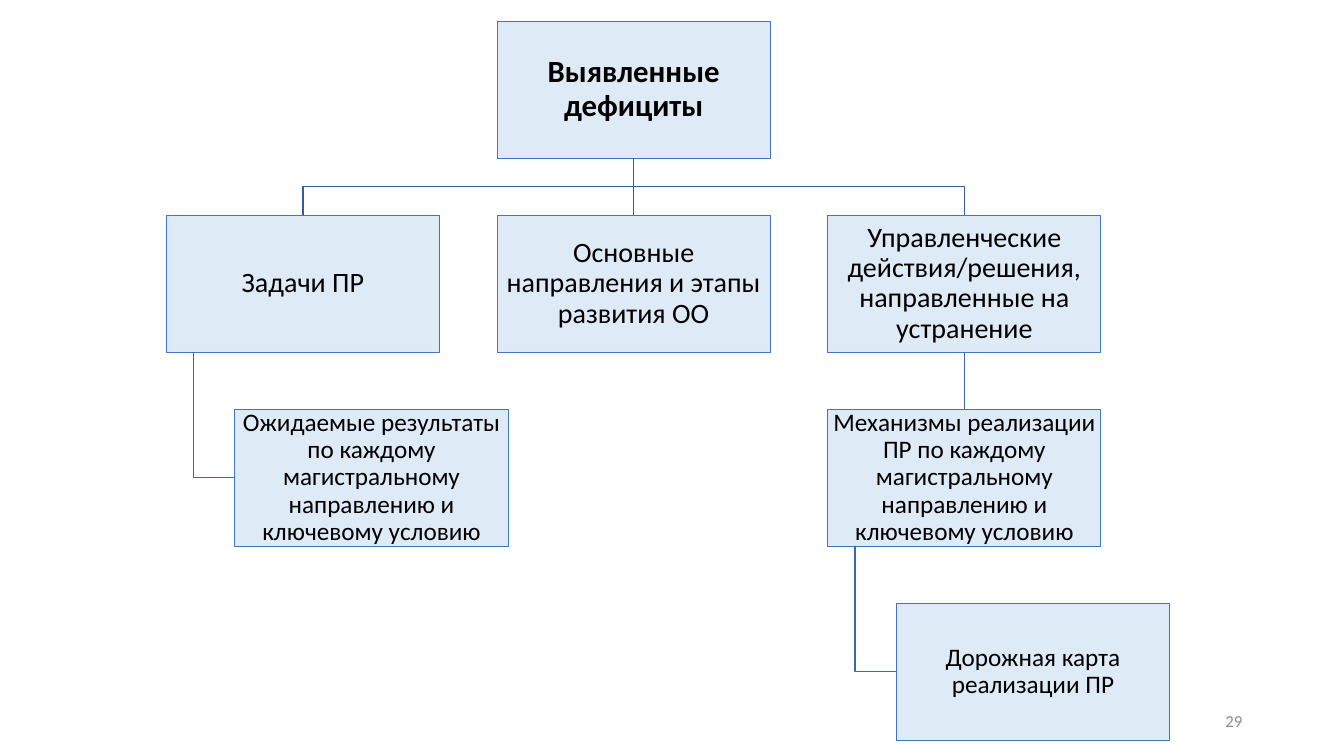
from lxml import etree
from pptx import Presentation
from pptx import util as u
from pptx.dml.color import RGBColor
from pptx.enum import shapes, text
from pptx.oxml.ns import qn

BOX_W, BOX_H = 2.71, 1.36
LEFT, TOP = 1.65, 0.21
COL_STEP, ROW_STEP = 3.28, 1.925
INDENT, TRUNK = 0.68, 0.27  # offsets of an indented box and of its trunk line
UPPER_LINE, LOWER_LINE = "365B9D", "3E67B2"


def rgb(value):
    return RGBColor.from_string(value)


def write(sp, content, size=18, color="000000", bold=False,
          align=text.PP_ALIGN.CENTER, spacing=0.9, inset=None):
    tf = sp.text_frame
    tf.word_wrap = True
    tf.vertical_anchor = text.MSO_ANCHOR.MIDDLE
    if inset is not None:
        tf.margin_left = tf.margin_right = u.Inches(inset)
        tf.margin_top = tf.margin_bottom = u.Inches(inset)
    p = tf.paragraphs[0]
    p.alignment = align
    p.line_spacing = spacing
    r = p.add_run()
    r.text = content
    r.font.name = "Calibri"
    r.font.size = u.Pt(size)
    r.font.bold = bold
    r.font.color.rgb = rgb(color)


class Chart:
    """Hierarchy of boxes on one slide."""
    fill, border = "DEEBF7", "4472C4"

    def __init__(self, s):
        self.s = s

    def box(self, col, row, content, size, indent=0, bold=False, inset=0.01):
        sp = self.s.shapes.add_shape(
            shapes.MSO_SHAPE.RECTANGLE,
            u.Inches(LEFT + col * COL_STEP + indent),
            u.Inches(TOP + row * ROW_STEP), u.Inches(BOX_W), u.Inches(BOX_H))
        sp.shadow.inherit = False
        sp.fill.solid()
        sp.fill.fore_color.rgb = rgb(self.fill)
        sp.line.color.rgb = rgb(self.border)
        sp.line.width = u.Pt(0.75)
        write(sp, content, size=size, bold=bold, inset=inset)
        return sp

    def straight(self, parent, child, color):
        line = self.s.shapes.add_connector(shapes.MSO_CONNECTOR.STRAIGHT, 0, 0, 0, 0)
        line.begin_connect(parent, 2)
        line.end_connect(child, 0)
        line.line.color.rgb = rgb(color)
        line.line.width = u.Pt(1)
        etree.SubElement(line._element.spPr, qn("a:effectLst"))

    def bent(self, points, color):
        """Draw an open line through points given in EMU."""
        path = self.s.shapes.build_freeform(*points[0], scale=1.0)
        path.add_line_segments(points[1:], close=False)
        sp = path.convert_to_shape()
        sp.shadow.inherit = False
        sp.fill.background()
        sp.line.color.rgb = rgb(color)
        sp.line.width = u.Pt(1)

    def fork(self, parent, child):
        """Join a parent's bottom to the top of a child in another column."""
        x1, x2 = (sp.left + sp.width // 2 for sp in (parent, child))
        y1, y2 = parent.top + parent.height, child.top
        middle = (y1 + y2) // 2
        self.bent([(x1, y1), (x1, middle), (x2, middle), (x2, y2)], UPPER_LINE)

    def hang(self, parent, child):
        """Join a parent's bottom to the left side of an indented child."""
        x = parent.left + u.Inches(TRUNK)
        y = child.top + child.height // 2
        self.bent([(x, parent.top + parent.height), (x, y), (child.left, y)], LOWER_LINE)

    def page_number(self, content):
        sp = self.s.shapes.add_textbox(u.Inches(9.42), u.Inches(6.95),
                                       u.Inches(3), u.Inches(0.4))
        write(sp, content, size=12, color="8C8C8C",
              align=text.PP_ALIGN.RIGHT, spacing=1.0)


def main():
    prs = Presentation()
    prs.slide_width, prs.slide_height = u.Inches(13.33), u.Inches(7.5)
    chart = Chart(prs.slides.add_slide(prs.slide_layouts[6]))
    chart.page_number("29")

    deficits = chart.box(1, 0, "Выявленные дефициты", 22, bold=True, inset=0.02)
    tasks = chart.box(0, 1, "Задачи ПР", 20)
    directions = chart.box(1, 1, "Основные направления и этапы развития ОО", 20)
    actions = chart.box(
        2, 1, "Управленческие действия/решения, направленные на устранение", 20)
    results = chart.box(
        0, 2, "Ожидаемые результаты по каждому магистральному направлению "
        "и ключевому условию", 18, indent=INDENT)
    mechanisms = chart.box(
        2, 2, "Механизмы реализации ПР по каждому магистральному направлению "
        "и ключевому условию", 18)
    roadmap = chart.box(2, 3, "Дорожная карта реализации ПР", 18, indent=INDENT)

    chart.fork(deficits, tasks)
    chart.fork(deficits, actions)
    chart.straight(deficits, directions, UPPER_LINE)
    chart.straight(actions, mechanisms, LOWER_LINE)
    chart.hang(tasks, results)
    chart.hang(mechanisms, roadmap)
    prs.save("out.pptx")


if __name__ == "__main__":
    main()
